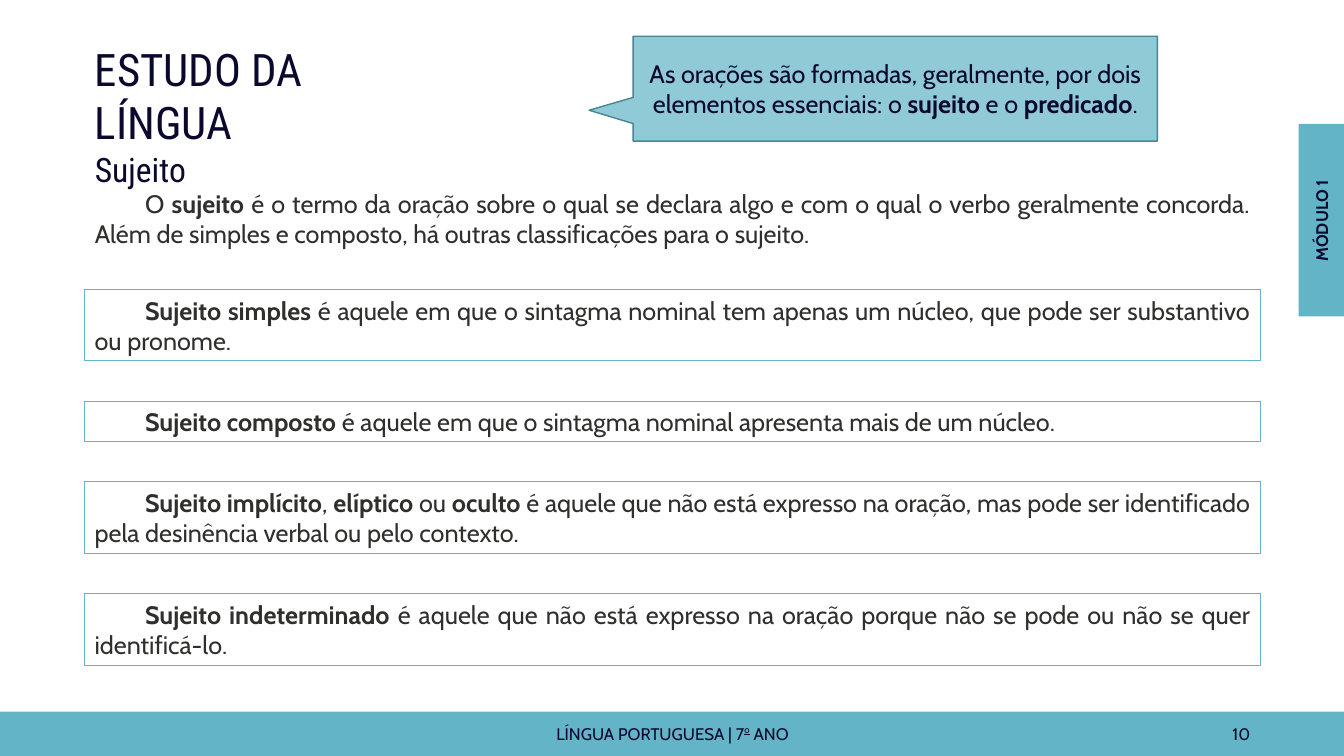
from dataclasses import dataclass

from lxml.etree import SubElement
from pptx import Presentation
from pptx.dml.color import RGBColor
from pptx.enum.shapes import MSO_SHAPE
from pptx.enum.text import MSO_ANCHOR, MSO_AUTO_SIZE, PP_ALIGN
from pptx.oxml.ns import qn
from pptx.shapes.autoshape import Shape
from pptx.slide import Slide
from pptx.text.text import TextFrame, _Paragraph
from pptx.util import Inches, Pt


@dataclass(frozen=True)
class Theme:
    teal: str = "62B4C6"
    dark_teal: str = "498592"
    navy: str = "0B082E"
    gray: str = "2F2F2E"
    heading_font: str = "Roboto Condensed"
    body_font: str = "Cabin"
    title_size: int = 32
    subtitle_size: int = 24
    body_size: int = 18
    small_size: int = 12


@dataclass(frozen=True)
class Frame:
    left: float
    top: float
    width: float
    height: float

    def lengths(self) -> tuple:
        return tuple(Inches(v) for v in (self.left, self.top, self.width, self.height))


@dataclass(frozen=True)
class Definition:
    text: str
    height: float


THEME = Theme()
LEFT, WIDTH = 0.84, 11.66
SLIDE_WIDTH, SLIDE_HEIGHT = 13.33, 7.5
DEFINITIONS_TOP, DEFINITION_GAP = 2.87, 0.4
TWO_LINES, ONE_LINE = 0.71, 0.4

INTRODUCTION = (
    "O *sujeito* é o termo da oração sobre o qual se declara algo e com o qual "
    "o verbo geralmente concorda. Além de simples e composto, há outras "
    "classificações para o sujeito."
)
CALLOUT = (
    "As orações são formadas, geralmente, por dois elementos essenciais: "
    "o *sujeito* e o *predicado*."
)
DEFINITIONS = [
    Definition("*Sujeito simples *é aquele em que o sintagma nominal tem apenas "
               "um núcleo, que pode ser substantivo ou pronome.", TWO_LINES),
    Definition("*Sujeito composto *é aquele em que o sintagma nominal apresenta "
               "mais de um núcleo.", ONE_LINE),
    Definition("*Sujeito implícito*, *elíptico* ou *oculto* é aquele que não está "
               "expresso na oração, mas pode ser identificado pela desinência "
               "verbal ou pelo contexto.", TWO_LINES),
    Definition("*Sujeito indeterminado *é aquele que não está expresso na oração "
               "porque não se pode ou não se quer identificá-lo.", TWO_LINES),
]


def write(para: _Paragraph, text: str, *, size: int = THEME.body_size,
          font: str = THEME.body_font, color: str = THEME.navy,
          align: PP_ALIGN = PP_ALIGN.LEFT, after: int = 0,
          indent: float = 0, ordinal: bool = False) -> None:
    para.alignment = align
    para.line_spacing = 1.0
    para.space_before, para.space_after = Pt(0), Pt(after)
    properties = para._p.get_or_add_pPr()
    properties.set("marL", "0")
    properties.set("indent", str(Inches(indent)))
    if properties.find(qn("a:buNone")) is None:
        SubElement(properties, qn("a:buNone"))
    for index, piece in enumerate(text.split("*")):
        if not piece:
            continue
        span = para.add_run()
        span.text = piece
        span.font.size = Pt(size)
        span.font.name = font
        span.font.bold = index % 2 == 1
        span.font.color.rgb = RGBColor.from_string(color)
        if ordinal:
            span.font.underline = True
            span._r.get_or_add_rPr().set("baseline", "45000")


def prepare(box: Shape, anchor: MSO_ANCHOR = MSO_ANCHOR.MIDDLE) -> TextFrame:
    text_frame = box.text_frame
    text_frame.word_wrap = True
    text_frame.auto_size = MSO_AUTO_SIZE.NONE
    text_frame.vertical_anchor = anchor
    text_frame.margin_left = text_frame.margin_right = Inches(0.1)
    text_frame.margin_top = text_frame.margin_bottom = Inches(0.05)
    return text_frame


def move(box: Shape, frame: Frame) -> None:
    box.left, box.top, box.width, box.height = frame.lengths()


def add_box(page: Slide, frame: Frame, *, kind: MSO_SHAPE = MSO_SHAPE.RECTANGLE,
            fill: str = "", line: str = "", line_width: float = 0.75) -> Shape:
    box = page.shapes.add_shape(kind, *frame.lengths())
    box.shadow.inherit = False
    if fill:
        box.fill.solid()
        box.fill.fore_color.rgb = RGBColor.from_string(fill)
    else:
        box.fill.background()
    if line:
        box.line.color.rgb = RGBColor.from_string(line)
        box.line.width = Pt(line_width)
    else:
        box.line.fill.background()
    return box


def add_label(page: Slide, frame: Frame, rotation: int = 0) -> _Paragraph:
    box = page.shapes.add_textbox(*frame.lengths())
    box.rotation = rotation
    return prepare(box).paragraphs[0]


def add_footer(page: Slide) -> None:
    add_box(page, Frame(0, 7.06, SLIDE_WIDTH, 0.44), fill=THEME.teal)
    subject = add_label(page, Frame(4.42, 7.09, 4.5, 0.38))
    for text, ordinal in (("LÍNGUA PORTUGUESA | 7", False), ("o", True), (" ANO", False)):
        write(subject, text, size=THEME.small_size, align=PP_ALIGN.CENTER,
              after=6, ordinal=ordinal)
    number = add_label(page, Frame(9.42, 7.09, 3.08, 0.38))
    write(number, "10", size=THEME.small_size, align=PP_ALIGN.RIGHT, after=6)


def add_module_tab(page: Slide) -> None:
    add_box(page, Frame(12.88, 1.23, 0.45, 1.91), fill=THEME.teal)
    label = add_label(page, Frame(12.15, 2.04, 1.91, 0.3), rotation=270)
    write(label, "*MÓDULO 1*", size=THEME.small_size, align=PP_ALIGN.CENTER)


def fill_title(page: Slide) -> None:
    title = page.shapes.title
    move(title, Frame(LEFT, 0.36, 3.58, 1.04))
    text_frame = prepare(title, MSO_ANCHOR.TOP)
    write(text_frame.paragraphs[0], "ESTUDO DA LÍNGUA",
          size=THEME.title_size, font=THEME.heading_font)
    write(text_frame.add_paragraph(), "Sujeito",
          size=THEME.subtitle_size, font=THEME.heading_font)


def write_body(box: Shape, text: str) -> None:
    write(prepare(box).paragraphs[0], text, color=THEME.gray,
          align=PP_ALIGN.JUSTIFY, indent=0.5)


def add_callout(page: Slide) -> None:
    callout = add_box(page, Frame(6.28, 0.36, 5.2, 1.04),
                      kind=MSO_SHAPE.RECTANGULAR_CALLOUT,
                      fill=THEME.teal, line=THEME.dark_teal, line_width=1)
    callout.adjustments[0], callout.adjustments[1] = -0.584, 0.206
    color = callout._element.spPr.find(qn("a:solidFill"))[0]
    SubElement(color, qn("a:alpha")).set("val", "70000")
    write(prepare(callout).paragraphs[0], CALLOUT, align=PP_ALIGN.CENTER)


def add_definitions(page: Slide) -> None:
    top = DEFINITIONS_TOP
    for definition in DEFINITIONS:
        frame = Frame(LEFT, top, WIDTH, definition.height)
        write_body(add_box(page, frame, line=THEME.teal), definition.text)
        top += definition.height + DEFINITION_GAP


def main() -> None:
    deck = Presentation()
    deck.slide_width, deck.slide_height = Inches(SLIDE_WIDTH), Inches(SLIDE_HEIGHT)
    page = deck.slides.add_slide(deck.slide_layouts[1])
    add_footer(page)
    add_module_tab(page)
    fill_title(page)
    introduction = page.placeholders[1]
    move(introduction, Frame(LEFT, 1.81, WIDTH, TWO_LINES))
    write_body(introduction, INTRODUCTION)
    add_callout(page)
    add_definitions(page)
    deck.save("out.pptx")


if __name__ == "__main__":
    main()
